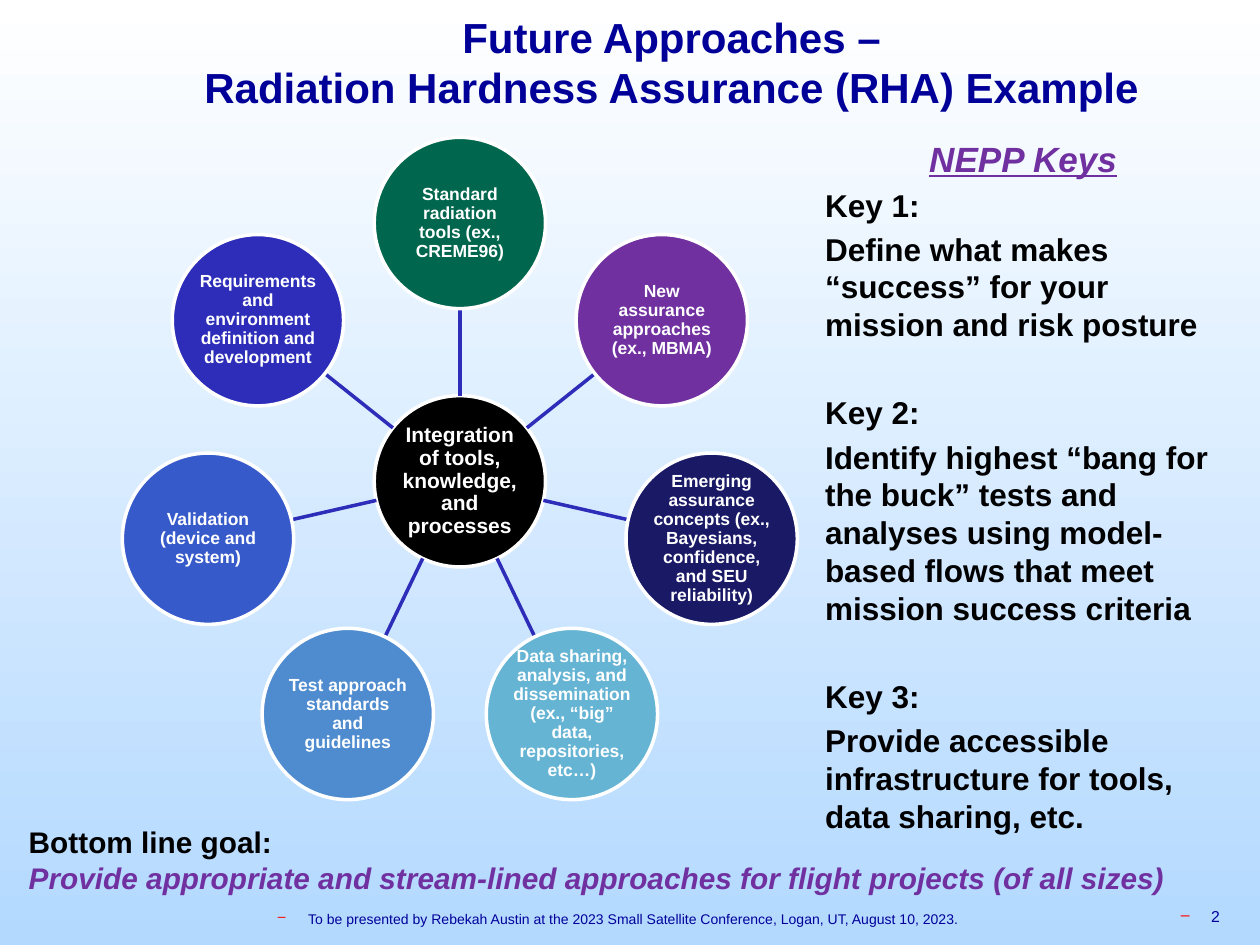
from math import cos, pi, sin
from lxml.etree import SubElement
from pptx import Presentation
from pptx.dml.color import RGBColor
from pptx.enum.shapes import MSO_CONNECTOR as Connector, MSO_SHAPE as Shape
from pptx.enum.text import MSO_ANCHOR as Anchor, PP_ALIGN as Align
from pptx.oxml.ns import qn
from pptx.util import Inches, Pt

# Content
TITLE = "Future Approaches –\vRadiation Hardness Assurance (RHA) Example"
HUB = "Integration of tools, knowledge, and processes"
RING = [  # clockwise from the top: text, fill
    ("Standard radiation tools (ex., CREME96)", "green"),
    ("New assurance approaches (ex., MBMA)", "purple"),
    ("Emerging assurance concepts (ex., Bayesians, confidence, and SEU reliability)", "midnight"),
    ("Data sharing, analysis, and dissemination (ex., “big” data, repositories, etc…)", "aqua"),
    ("Test approach standards and guidelines", "sky"),
    ("Validation (device and system)", "royal"),
    ("Requirements and environment definition and development", "blue"),
]
KEYS_HEADING = "NEPP Keys"
KEYS = [
    ("Key 1:", "Define what makes “success” for your mission and risk posture"),
    ("Key 2:", "Identify highest “bang for the buck” tests and analyses using "
               "model-based flows that meet mission success criteria"),
    ("Key 3:", "Provide accessible infrastructure for tools, data sharing, etc."),
]
GOAL = ["Bottom line goal:",
        "Provide appropriate and stream-lined approaches for flight projects (of all sizes)"]
FOOTER = ("To be presented by Rebekah Austin at the 2023 Small Satellite Conference, "
          "Logan, UT, August 10, 2023.")
PAGE_NUMBER = "2"

COLORS = {
    "white": "FFFFFF", "black": "000000", "haze": "B3D9FF", "navy": "000099",
    "green": "00664D", "purple": "7030A0", "midnight": "191966", "aqua": "66B4D3",
    "sky": "4F8CCF", "royal": "375ACB", "blue": "2D2DB9", "red": "FF0000",
}
WIDTH, HEIGHT = 10, 7.5
CENTER_X, CENTER_Y = 3.65, 3.82
RING_RADIUS, CIRCLE_RADIUS = 2.05, 0.68


def color(name):
    return RGBColor.from_string(COLORS[name])


def style(para, size, ink, bold=True, italic=False, underline=False, align=Align.LEFT):
    para.alignment = align
    for span in para.runs:
        font = span.font
        font.name, font.size = "Arial", Pt(size)
        font.bold, font.italic, font.underline = bold, italic, underline
        font.color.rgb = color(ink)


def add_box(page, left, top, width, height, text, anchor=Anchor.TOP):
    box = page.shapes.add_textbox(*map(Inches, (left, top, width, height)))
    frame = box.text_frame
    frame.word_wrap = True
    frame.vertical_anchor = anchor
    frame.text = text
    return frame.paragraphs


def add_dash(para):
    props = para._p.get_or_add_pPr()
    props.set("marL", str(Inches(0.04)))
    props.set("indent", str(Inches(-0.24)))
    ink = SubElement(props, qn("a:buClr"))
    SubElement(ink, qn("a:srgbClr")).set("val", COLORS["red"])
    SubElement(props, qn("a:buChar")).set("char", "–")


def add_circle(page, x, y, text, fill, size):
    side = 2 * CIRCLE_RADIUS
    circle = page.shapes.add_shape(Shape.OVAL, *map(
        Inches, (x - CIRCLE_RADIUS, y - CIRCLE_RADIUS, side, side)))
    circle.shadow.inherit = False
    circle.fill.solid()
    circle.fill.fore_color.rgb = color(fill)
    circle.line.color.rgb = color("white")
    circle.line.width = Pt(2)
    frame = circle.text_frame
    frame.word_wrap = True
    frame.vertical_anchor = Anchor.MIDDLE
    frame.margin_left = frame.margin_right = Inches(0.01)
    frame.margin_top = frame.margin_bottom = Inches(0.01)
    frame.text = text
    para = frame.paragraphs[0]
    para.line_spacing = 0.9
    style(para, size, "white", align=Align.CENTER)


def add_spoke(page, angle):
    ends = [CENTER_X + CIRCLE_RADIUS * cos(angle), CENTER_Y + CIRCLE_RADIUS * sin(angle)]
    reach = RING_RADIUS - CIRCLE_RADIUS
    ends += [CENTER_X + reach * cos(angle), CENTER_Y + reach * sin(angle)]
    spoke = page.shapes.add_connector(Connector.STRAIGHT, *map(Inches, ends))
    spoke.line.color.rgb = color("blue")
    spoke.line.width = Pt(2)
    SubElement(spoke._element.spPr, qn("a:effectLst"))


def main():
    deck = Presentation()
    deck.slide_width, deck.slide_height = Inches(WIDTH), Inches(HEIGHT)
    page = deck.slides.add_slide(deck.slide_layouts[6])

    # Background, white at the top to light blue
    backdrop = page.background.fill
    backdrop.gradient()
    backdrop.gradient_angle = 270
    for stop, name, place in zip(backdrop.gradient_stops, ("white", "haze"), (0, 1)):
        stop.color.rgb = color(name)
        stop.position = place

    # Hub and ring
    add_circle(page, CENTER_X, CENTER_Y, HUB, "black", 12)
    for index, (text, fill) in enumerate(RING):
        angle = 2 * pi * index / len(RING) - pi / 2
        add_spoke(page, angle)
        add_circle(page, CENTER_X + RING_RADIUS * cos(angle),
                   CENTER_Y + RING_RADIUS * sin(angle), text, fill, 10)

    # Title
    title = add_box(page, 1.08, 0.03, 8.5, 0.92, TITLE, Anchor.MIDDLE)[0]
    style(title, 24, "navy", align=Align.CENTER)

    # Bottom line goal
    lead, goal = add_box(page, 0.13, 6.49, 9.66, 0.67, "\n".join(GOAL))
    style(lead, 17, "black")
    style(goal, 17, "purple", italic=True)

    # Footer and page number
    footer = add_box(page, 0.42, 7.17, 9.16, 0.24, FOOTER, Anchor.MIDDLE)[0]
    number = add_box(page, 9.1, 7.15, 0.68, 0.24, PAGE_NUMBER)[0]
    for para, size, align in ((footer, 8, Align.CENTER), (number, 9, Align.RIGHT)):
        add_dash(para)
        style(para, size, "navy", bold=False, align=align)

    # Keys column
    lines = [KEYS_HEADING] + [line for key in KEYS for line in key]
    heading, *paras = add_box(page, 6.45, 1.04, 3.34, 5.77, "\n".join(lines))
    style(heading, 20, "purple", italic=True, underline=True, align=Align.CENTER)
    for index, para in enumerate(paras):
        starts_new_key = index > 0 and index % 2 == 0
        para.space_before = Pt(28.8 if starts_new_key else 3.6)
        style(para, 18, "black")

    deck.save("out.pptx")


if __name__ == "__main__":
    main()
